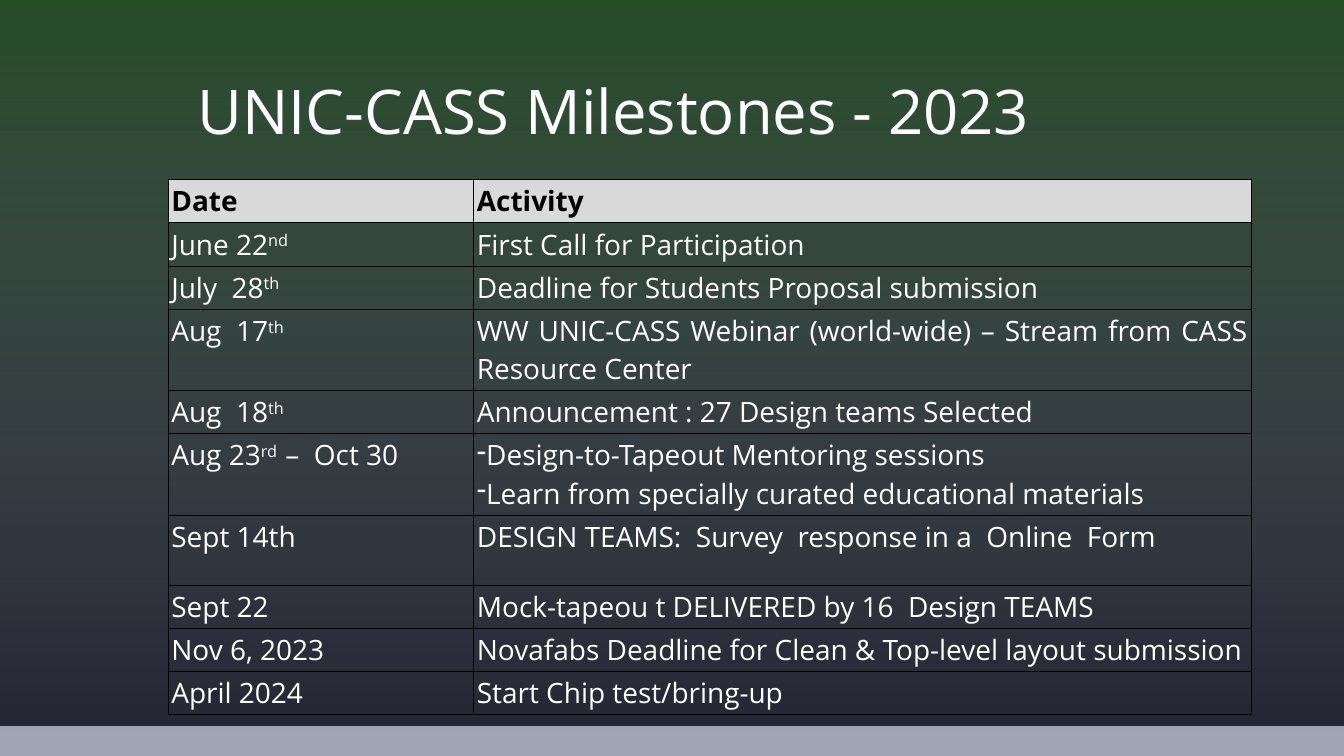
from lxml import etree
from pptx import Presentation
from pptx.dml.color import RGBColor
from pptx.enum.text import MSO_ANCHOR, MSO_AUTO_SIZE, PP_ALIGN
from pptx.enum.shapes import MSO_SHAPE
from pptx.oxml.ns import qn
from pptx.util import Inches, Pt

LEFT, JUSTIFY = PP_ALIGN.LEFT, PP_ALIGN.JUSTIFY
TOP, NO_FIT = MSO_ANCHOR.TOP, MSO_AUTO_SIZE.NONE
RECTANGLE = MSO_SHAPE.RECTANGLE
WIDTH, HEIGHT = 26.67, 15
FONT = "Open Sans"
COLORS = {
    "green": "30662C", "mist": "A2A5B6", "night": "151623",
    "title": "FFFFFF", "header": "D9D9D9", "ink": "000000", "body": "FEFFFE",
}
DATE_SHARE = 0.282
ROW, TALL_ROW = 0.84, 1.39
MILESTONES = [
    ("Date", ["Activity"], ROW),
    ("June 22^nd", ["First Call for Participation"], ROW),
    ("July  28^th", ["Deadline for Students Proposal submission"], ROW),
    ("Aug  17^th", ["WW UNIC-CASS Webinar (world-wide) – Stream from CASS Resource Center"], ROW),
    ("Aug  18^th", ["Announcement : 27 Design teams Selected"], ROW),
    ("Aug 23^rd  ^–  Oct 30", ["Design-to-Tapeout Mentoring sessions",
                               "Learn from specially curated educational materials"], TALL_ROW),
    ("Sept 14th", ["DESIGN TEAMS:  Survey  response in a  Online  Form"], TALL_ROW),
    ("Sept 22", ["Mock-tapeou t DELIVERED by 16  Design TEAMS"], ROW),
    ("Nov 6, 2023", ["Novafabs Deadline for Clean & Top-level layout submission"], ROW),
    ("April 2024", ["Start Chip test/bring-up"], ROW),
]


def rgb(name):
    return RGBColor.from_string(COLORS[name])


def share_box(left, top, width, height):
    return (Inches(left * WIDTH), Inches(top * HEIGHT),
            Inches(width * WIDTH), Inches(height * HEIGHT))


def write(paragraph, text, size=40, color="body", bold=False, align=JUSTIFY, bullet=None):
    paragraph.alignment = align
    for index, piece in enumerate(text.split("^")):
        run = paragraph.add_run()
        run.text = piece
        run.font.name, run.font.size, run.font.bold = FONT, Pt(size), bold
        run.font.color.rgb = rgb(color)
        if index % 2:
            run.font._element.set("baseline", "30000")
    if bullet:
        properties = paragraph._p.get_or_add_pPr()
        properties.set("marL", "0")
        properties.set("indent", "0")
        etree.SubElement(properties, qn("a:buChar")).set("char", bullet)


def set_margins(holder, side, vertical):
    holder.margin_left = holder.margin_right = Inches(side)
    holder.margin_top = holder.margin_bottom = Inches(vertical)


def fade(fill, *stops):
    fill.gradient()
    fill.gradient_angle = 270
    for stop, (color, opacity) in zip(fill.gradient_stops, stops):
        stop.color.rgb = rgb(color)
        if opacity < 100:
            tint = stop._gs.find(qn("a:srgbClr"))
            etree.SubElement(tint, qn("a:alpha")).set("val", str(opacity * 1000))


def draw_backdrop(slide, box):
    fade(slide.background.fill, ("green", 100), ("mist", 100))
    veil = slide.shapes.add_shape(RECTANGLE, *box)
    veil.shadow.inherit = False
    veil.line.fill.background()
    fade(veil.fill, ("night", 29), ("night", 88))
    slide.shapes._spTree.insert(2, veil._element)


def draw_title(slide, box):
    title = slide.shapes.title
    title.left, title.top, title.width, title.height = box
    frame = title.text_frame
    frame.auto_size, frame.vertical_anchor, frame.word_wrap = NO_FIT, TOP, True
    set_margins(frame, 0.04, 0.04)
    heading = frame.paragraphs[0]
    heading.line_spacing = 0.95
    write(heading, "UNIC-CASS Milestones - 2023", size=88, color="title", align=LEFT)


def outline_cell(cell):
    properties = cell._tc.get_or_add_tcPr()
    for index, side in enumerate(("lnL", "lnR", "lnT", "lnB")):
        border = etree.Element(qn(f"a:{side}"), w=str(Pt(0.5)))
        solid = etree.SubElement(border, qn("a:solidFill"))
        etree.SubElement(solid, qn("a:srgbClr")).set("val", COLORS["ink"])
        properties.insert(index, border)


def fill_cell(cell, lines, is_header):
    set_margins(cell, 0.07, 0.05)
    if is_header:
        cell.fill.solid()
        cell.fill.fore_color.rgb = rgb("header")
    else:
        cell.fill.background()
    outline_cell(cell)
    frame = cell.text_frame
    for index, line in enumerate(lines):
        paragraph = frame.add_paragraph() if index else frame.paragraphs[0]
        write(paragraph, line, color="ink" if is_header else "body", bold=is_header,
              bullet="-" if len(lines) > 1 else None)


def draw_milestones(slide, box):
    schedule = slide.shapes.add_table(len(MILESTONES), 2, *box).table
    schedule.first_row = schedule.horz_banding = False
    date_width = int(box[2] * DATE_SHARE)
    schedule.columns[0].width = date_width
    schedule.columns[1].width = box[2] - date_width
    for index, (date, activities, height) in enumerate(MILESTONES):
        schedule.rows[index].height = Inches(height)
        fill_cell(schedule.cell(index, 0), [date], index == 0)
        fill_cell(schedule.cell(index, 1), activities, index == 0)


def main():
    deck = Presentation()
    deck.slide_width, deck.slide_height = Inches(WIDTH), Inches(HEIGHT)
    slide = deck.slides.add_slide(deck.slide_layouts[5])
    draw_backdrop(slide, share_box(0, -0.04, 1, 1))
    draw_title(slide, share_box(0.1455, 0.1013, 0.8, 0.1587))
    draw_milestones(slide, share_box(0.1249, 0.2373, 0.8061, 0.678))
    deck.save("out.pptx")


if __name__ == "__main__":
    main()
